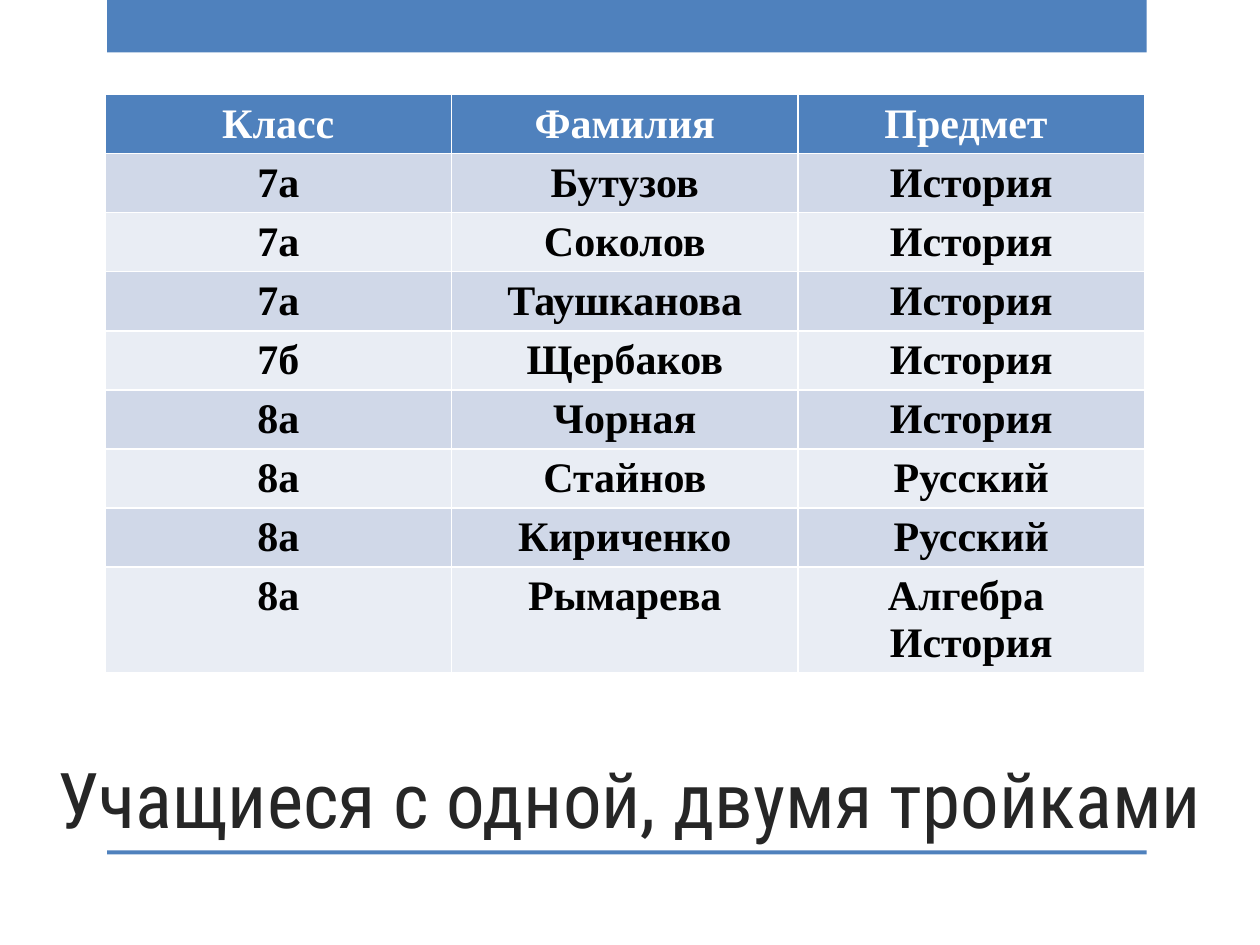
from dataclasses import dataclass

from pptx import Presentation
from pptx.dml.color import RGBColor
from pptx.enum.shapes import MSO_SHAPE
from pptx.enum.text import MSO_ANCHOR, MSO_AUTO_SIZE, PP_ALIGN
from pptx.slide import Slide
from pptx.text.text import TextFrame
from pptx.util import Pt

RECTANGLE = MSO_SHAPE.RECTANGLE
CENTER = PP_ALIGN.CENTER
BOTTOM = MSO_ANCHOR.BOTTOM
NO_AUTOFIT = MSO_AUTO_SIZE.NONE

BLUE = RGBColor(0x4F, 0x81, 0xBD)
DARK_BAND = RGBColor(0xD0, 0xD8, 0xE8)
LIGHT_BAND = RGBColor(0xE9, 0xED, 0xF4)
WHITE = RGBColor(0xFF, 0xFF, 0xFF)
BLACK = RGBColor(0, 0, 0)
CHARCOAL = RGBColor(0x26, 0x26, 0x26)

TITLE_FONT = "Roboto Condensed"
TABLE_FONT = "Times New Roman"
COLUMN_WIDTH = 198
ROW_HEIGHT = 29.5


@dataclass(frozen=True)
class Bar:
    top: float
    height: float


BARS = [Bar(0, 30), Bar(486, 2.2)]

ROWS = [
    ("Класс", "Фамилия", "Предмет "),
    ("7а", "Бутузов", "История"),
    ("7а", "Соколов", "История"),
    ("7а", "Таушканова", "История"),
    ("7б", "Щербаков", "История"),
    ("8а", "Чорная", "История"),
    ("8а", "Стайнов", "Русский"),
    ("8а", "Кириченко", "Русский"),
    ("8а", "Рымарева", "Алгебра \nИстория"),
]


def write_text(frame: TextFrame, text: str, *, font: str, size: float,
               color: RGBColor, bold: bool = False) -> None:
    frame.text = text
    for para in frame.paragraphs:
        para.alignment = CENTER
        for span in para.runs:
            span.font.name = font
            span.font.size = Pt(size)
            span.font.bold = bold
            span.font.color.rgb = color


def draw_bar(page: Slide, bar: Bar) -> None:
    box = page.shapes.add_shape(RECTANGLE, Pt(61.2), Pt(bar.top), Pt(594), Pt(bar.height))
    box.shadow.inherit = False
    box.fill.solid()
    box.fill.fore_color.rgb = BLUE
    box.line.fill.background()


def draw_title(page: Slide, text: str) -> None:
    title = page.shapes.title
    title.left, title.top, title.width, title.height = Pt(0), Pt(360), Pt(720), Pt(126)
    frame = title.text_frame
    frame.word_wrap = True
    frame.auto_size = NO_AUTOFIT
    frame.vertical_anchor = BOTTOM
    write_text(frame, text, font=TITLE_FONT, size=44, color=CHARCOAL)


def draw_table(page: Slide, rows: list[tuple[str, ...]]) -> None:
    columns = len(rows[0])
    table = page.shapes.add_table(
        len(rows), columns, Pt(60), Pt(54),
        Pt(COLUMN_WIDTH * columns), Pt(ROW_HEIGHT * len(rows)),
    ).table
    for row_index, row in enumerate(rows):
        header = row_index == 0
        band = DARK_BAND if row_index % 2 else LIGHT_BAND
        for column_index, text in enumerate(row):
            cell = table.cell(row_index, column_index)
            cell.fill.solid()
            cell.fill.fore_color.rgb = BLUE if header else band
            write_text(cell.text_frame, text, font=TABLE_FONT, size=24,
                       color=WHITE if header else BLACK, bold=True)


def main() -> None:
    deck = Presentation()
    deck.slide_width, deck.slide_height = Pt(720), Pt(540)
    page = deck.slides.add_slide(deck.slide_layouts.get_by_name("Title Only"))
    for bar in BARS:
        draw_bar(page, bar)
    draw_title(page, "Учащиеся с одной, двумя тройками")
    draw_table(page, ROWS)
    deck.save("out.pptx")


if __name__ == "__main__":
    main()
